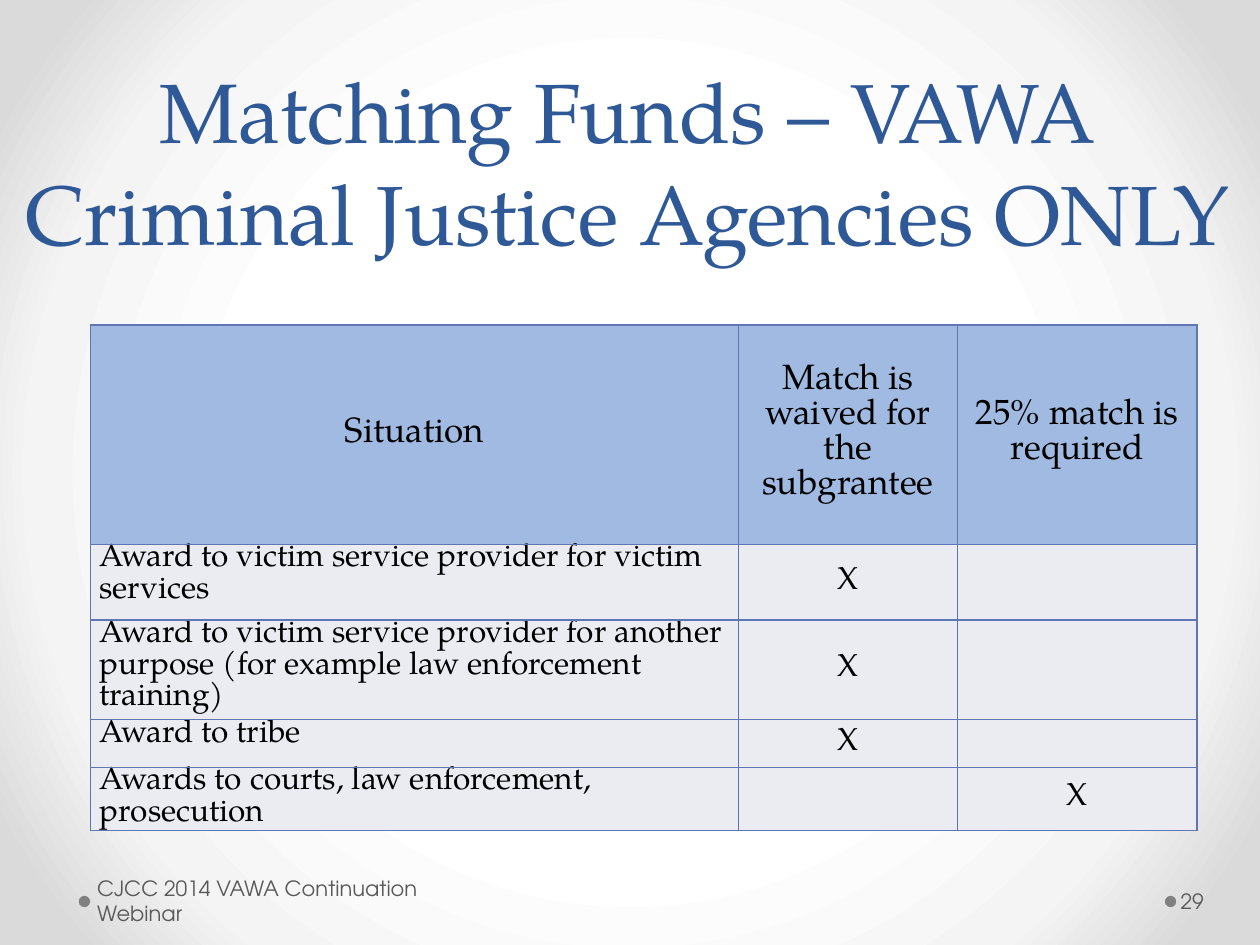
from pptx import Presentation, oxml, util as u
from pptx.dml.color import RGBColor
from pptx.enum import shapes, text

SERIF, SANS = "TeX Gyre Pagella", "TeX Gyre Adventor"
DRAWING = 'xmlns:a="http://schemas.openxmlformats.org/drawingml/2006/main"'
MAIN = 'xmlns:p="http://schemas.openxmlformats.org/presentationml/2006/main"'
MIDDLE = text.MSO_ANCHOR.MIDDLE
HEADERS = ["Situation", "Match is waived for the subgrantee", "25% match is required"]
SITUATIONS = [
    ("Award to victim service provider for victim services", 1),
    ("Award to victim service provider for another purpose "
     "(for example law enforcement training)", 1),
    ("Award to tribe", 1),
    ("Awards to courts, law enforcement, prosecution", 2),
]
COLUMNS = [51.4, 17.4, 19]
ROWS = [17.4, 6, 7.9, 3.8, 5]


def color(value):
    """Turn a hex string into a colour."""
    return RGBColor.from_string(value)


def grid(*counts):
    """Turn counts of cells on a 100 by 75 grid into lengths."""
    return [u.Inches(count / 10) for count in counts]


def write(frame, words, *, size, font=SERIF, ink="000000", align=text.PP_ALIGN.LEFT,
          spacing=None):
    """Write one formatted paragraph into a text frame."""
    para = frame.paragraphs[0]
    para.alignment = align
    if spacing:
        para.line_spacing = u.Pt(spacing)
    span = para.add_run()
    span.text = words
    span.font.size = u.Pt(size)
    span.font.name = font
    span.font.color.rgb = color(ink)


def set_margins(holder, left, top, right, bottom):
    """Set the four inner margins of a cell or text frame in grid cells."""
    (holder.margin_left, holder.margin_top,
     holder.margin_right, holder.margin_bottom) = grid(left, top, right, bottom)


def paint_background(page):
    """Give the page a radial gradient from white to grey."""
    stops = "".join(
        f'<a:gs pos="{share * 1000}"><a:srgbClr val="{value}"/></a:gs>'
        for share, value in [(50, "FFFFFF"), (76, "F4F4F4"), (92, "DADADA")])
    background = oxml.parse_xml(
        f'<p:bg {MAIN} {DRAWING}><p:bgPr><a:gradFill rotWithShape="1">'
        f'<a:gsLst>{stops}</a:gsLst><a:path path="circle">'
        '<a:fillToRect l="50000" t="50000" r="50000" b="50000"/></a:path>'
        '</a:gradFill><a:effectLst/></p:bgPr></p:bg>')
    page.element.cSld.insert(0, background)


def add_title(page, words):
    """Fill and place the title placeholder."""
    title = page.shapes.title
    title.left, title.top, title.width, title.height = grid(0, 8.3, 99.6, 12.5)
    frame = title.text_frame
    frame.word_wrap = True
    frame.auto_size = text.MSO_AUTO_SIZE.NONE
    frame.vertical_anchor = text.MSO_ANCHOR.BOTTOM
    set_margins(frame, 1, 0.5, 1, 0)
    write(frame, words, size=48, ink="2F5897", align=text.PP_ALIGN.CENTER, spacing=58)


def add_footer(page, words, left, width, margins):
    """Add a footer text with a dot before it."""
    dot = page.shapes.add_shape(shapes.MSO_SHAPE.OVAL, *grid(left - 0.95, 71.1, 0.9, 0.9))
    dot.shadow.inherit = False
    dot.fill.solid()
    dot.fill.fore_color.rgb = color("808080")
    dot.line.fill.background()
    frame = page.shapes.add_textbox(*grid(left, 69.5, width, 4)).text_frame
    frame.word_wrap = True
    frame.vertical_anchor = MIDDLE
    set_margins(frame, *margins)
    write(frame, words, size=12, font=SANS, ink="595959")


def style_cell(cell, fill):
    """Set the margins, borders and fill of a table cell."""
    set_margins(cell, 0.7, 0, 0.7, 0)
    properties = cell._tc.get_or_add_tcPr()
    for side in ("lnL", "lnR", "lnT", "lnB"):
        properties.append(oxml.parse_xml(
            f'<a:{side} {DRAWING} w="12700"><a:solidFill>'
            f'<a:srgbClr val="6076B4"/></a:solidFill></a:{side}>'))
    cell.fill.solid()
    cell.fill.fore_color.rgb = color(fill)


def add_match_table(page):
    """Add the table of award situations and their match rules."""
    table = page.shapes.add_table(
        len(ROWS), len(COLUMNS),
        *grid(7.2, 25.8, sum(COLUMNS), sum(ROWS))).table
    for column, width in zip(table.columns, grid(*COLUMNS)):
        column.width = width
    for row, height in zip(table.rows, grid(*ROWS)):
        row.height = height
    marked = [[words] + ["X" if index == mark else "" for index in (1, 2)]
              for words, mark in SITUATIONS]
    for r, line in enumerate([HEADERS] + marked):
        size = 18 if r else 20
        for c, words in enumerate(line):
            cell = table.cell(r, c)
            style_cell(cell, "EAECF2" if r else "A0BAE1")
            if not words:
                continue
            centered = r == 0 or c > 0
            cell.vertical_anchor = MIDDLE if centered else text.MSO_ANCHOR.TOP
            align = text.PP_ALIGN.CENTER if centered else text.PP_ALIGN.LEFT
            write(cell.text_frame, words, size=size, align=align, spacing=size)


def main():
    """Build the slide and save the deck."""
    deck = Presentation()
    deck.slide_width, deck.slide_height = grid(100, 75)
    page = deck.slides.add_slide(deck.slide_layouts[5])
    paint_background(page)
    add_title(page, "Matching Funds – VAWA Criminal Justice Agencies ONLY")
    add_footer(page, "CJCC 2014 VAWA Continuation Webinar", 7.2, 31.1, (0.5, 0.5, 1, 0.5))
    add_footer(page, "29", 93.4, 6.1, (0.3, 0.5, 0.5, 0.5))
    add_match_table(page)
    deck.save("out.pptx")


if __name__ == "__main__":
    main()
